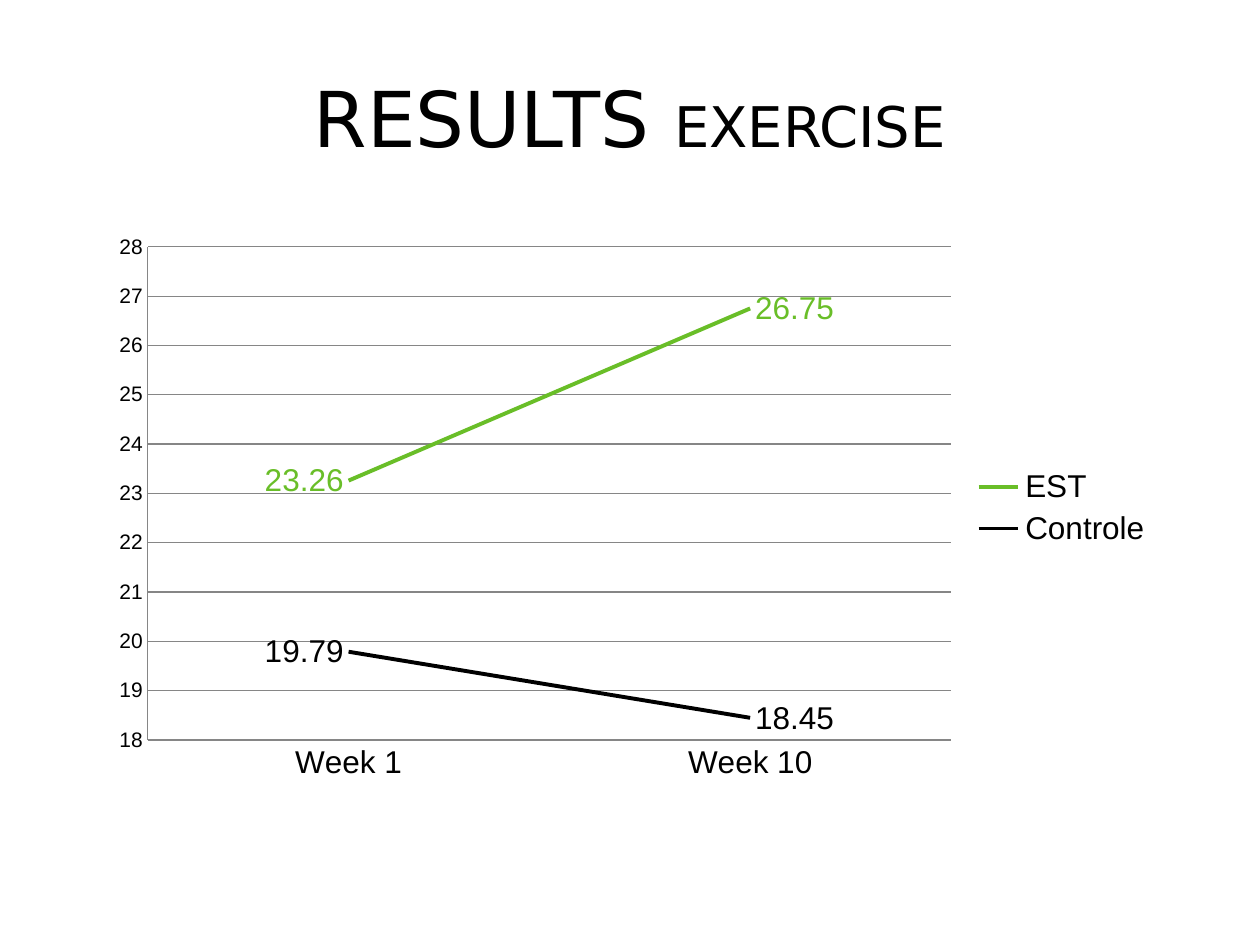
import pptx
import pptx.chart.data
import pptx.dml.color
import pptx.enum.chart
import pptx.enum.text
import pptx.oxml
import pptx.oxml.ns
import pptx.util
from pptx.util import Cm, Pt

BLACK = pptx.dml.color.RGBColor(0x00, 0x00, 0x00)
GREEN = pptx.dml.color.RGBColor(0x69, 0xBE, 0x28)
GREY = pptx.dml.color.RGBColor(0x86, 0x86, 0x86)

TITLE = [("RESULTS ", 44), ("EXERCISE", 32)]
WEEKS = ["Week 1", "Week 10"]
GROUPS = [
    ("EST", (23.26, 26.75), GREEN),
    ("Controle", (19.79, 18.45), BLACK),
]
PLOT_AREA = {"x": 0.05, "y": 0.04, "w": 0.75, "h": 0.87}


def set_font(font, size, color=BLACK, name="Arial"):
    font.name = name
    font.size = Pt(size)
    font.bold = False
    font.color.rgb = color


def place_plot(chart, fractions):
    """Fix the inner plot area as fractions of the chart's size."""
    plot_area = chart.element.find(".//" + pptx.oxml.ns.qn("c:plotArea"))
    for layout in plot_area.findall(pptx.oxml.ns.qn("c:layout")):
        plot_area.remove(layout)
    sizes = "".join(f'<c:{key} val="{value}"/>' for key, value in fractions.items())
    plot_area.insert(0, pptx.oxml.parse_xml(
        f'<c:layout {pptx.oxml.ns.nsdecls("c")}><c:manualLayout>'
        '<c:layoutTarget val="inner"/><c:xMode val="edge"/><c:yMode val="edge"/>'
        f'{sizes}</c:manualLayout></c:layout>'))


def add_title(page):
    title = page.shapes.title
    title.left, title.top, title.width, title.height = Cm(1.27), Cm(0.76), Cm(22.86), Cm(3.18)
    frame = title.text_frame
    frame.vertical_anchor = pptx.enum.text.MSO_ANCHOR.MIDDLE
    para = frame.paragraphs[0]
    para.alignment = pptx.enum.text.PP_ALIGN.CENTER
    for text, size in TITLE:
        span = para.add_run()
        span.text = text
        set_font(span.font, size, name="DejaVu Sans")


def add_results_chart(page):
    data = pptx.chart.data.CategoryChartData()
    data.categories = WEEKS
    for name, values, _ in GROUPS:
        data.add_series(name, values)
    chart = page.shapes.add_chart(
        pptx.enum.chart.XL_CHART_TYPE.LINE,
        Cm(1.9), Cm(4.52), Cm(21.59), Cm(11.43), data).chart
    chart.has_title = False
    set_font(chart.font, 18, name="Calibri")
    place_plot(chart, PLOT_AREA)

    chart.has_legend = True
    chart.legend.position = pptx.enum.chart.XL_LEGEND_POSITION.RIGHT
    chart.legend.include_in_layout = False
    set_font(chart.legend.font, 18)

    weeks, scores = chart.category_axis, chart.value_axis
    scores.minimum_scale, scores.maximum_scale, scores.major_unit = 18, 28, 1
    scores.has_major_gridlines = True
    for axis, size in ((weeks, 18), (scores, 12)):
        axis.major_tick_mark = pptx.enum.chart.XL_TICK_MARK.NONE
        set_font(axis.tick_labels.font, size)
    for line in (weeks.format.line, scores.format.line, scores.major_gridlines.format.line):
        line.color.rgb = GREY
        line.width = Pt(0.75)

    chart.plots[0].vary_by_categories = False
    sides = pptx.enum.chart.XL_LABEL_POSITION
    for series, (_, _, color) in zip(chart.plots[0].series, GROUPS):
        series.smooth = False
        series.format.line.color.rgb = color
        series.format.line.width = Pt(2.25)
        for index, side in enumerate((sides.LEFT, sides.RIGHT)):
            label = series.points[index].data_label
            set_font(label.font, 18, color)
            label.position = side


def main():
    deck = pptx.Presentation()
    deck.slide_width, deck.slide_height = Cm(25.4), Cm(19.05)
    page = deck.slides.add_slide(deck.slide_layouts[5])
    add_title(page)
    add_results_chart(page)
    deck.save("out.pptx")


if __name__ == "__main__":
    main()
